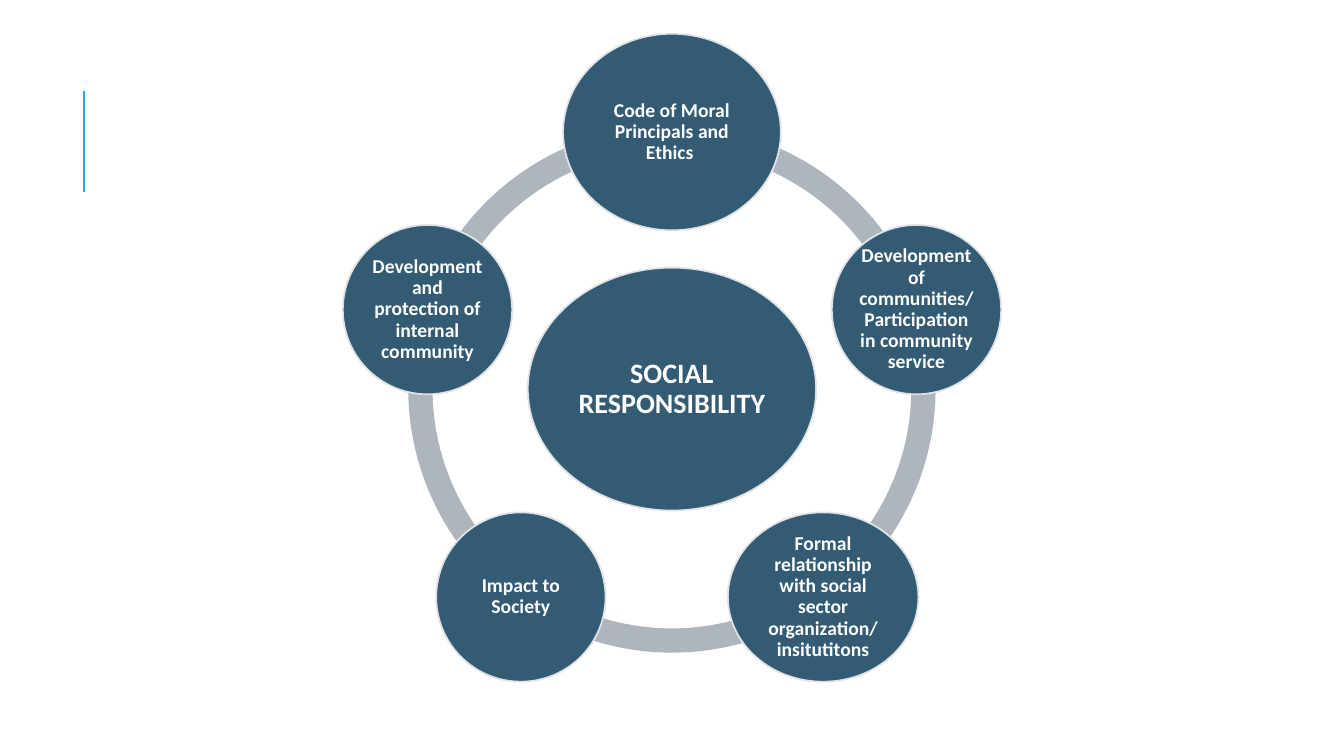
from dataclasses import dataclass
from math import cos, radians, sin

from pptx import Presentation
from pptx.dml.color import RGBColor
from pptx.enum.shapes import MSO_CONNECTOR as Connector, MSO_SHAPE as Shape
from pptx.enum.text import MSO_ANCHOR as Anchor, PP_ALIGN as Align
from pptx.oxml.ns import qn
from pptx.util import Inches, Pt

HUB = ("SOCIAL RESPONSIBILITY", 2.86, 2.41)
NODES = [
    ("Code of Moral Principals and Ethics ", 2.16, 1.95),
    ("Development of communities/ Participation in community service", 1.68, 1.68),
    ("Formal relationship with social sector organization/ insitutitons", 1.89, 1.68),
    ("Impact to Society", 1.68, 1.68),
    ("Development and protection of internal community", 1.68, 1.68),
]


@dataclass(frozen=True)
class Theme:
    font: str = "Calibri"
    hub_size: int = 20
    node_size: int = 14
    circle: RGBColor = RGBColor(0x33, 0x5B, 0x74)
    outline: RGBColor = RGBColor(0xDF, 0xE3, 0xE5)
    ring: RGBColor = RGBColor(0xAE, 0xB5, 0xBC)
    accent: RGBColor = RGBColor(0x1C, 0xAD, 0xE4)
    text: RGBColor = RGBColor(0xFF, 0xFF, 0xFF)


THEME = Theme()
WIDTH, HEIGHT = 13.33, 7.5
CENTER_X, CENTER_Y = WIDTH / 2, 3.86
RING_SIZE, RING_THICKNESS = 5.23, 0.046
ORBIT = 2.55
STEP = 360 / len(NODES)
ANGLE_SCALE = 0.6


def add_centered(slide, kind, x, y, width, height, fill):
    shape = slide.shapes.add_shape(
        kind, Inches(x - width / 2), Inches(y - height / 2), Inches(width), Inches(height))
    shape.shadow.inherit = False
    shape.fill.solid()
    shape.fill.fore_color.rgb = fill
    shape.line.fill.background()
    return shape


def add_arc(slide, start):
    arc = add_centered(slide, Shape.BLOCK_ARC, CENTER_X, CENTER_Y,
                       RING_SIZE, RING_SIZE, THEME.ring)
    arc.adjustments[0] = start % 360 * ANGLE_SCALE
    arc.adjustments[1] = (start + STEP) % 360 * ANGLE_SCALE
    arc.adjustments[2] = RING_THICKNESS


def add_circle(slide, content, x, y, size):
    text, width, height = content
    circle = add_centered(slide, Shape.OVAL, x, y, width, height, THEME.circle)
    circle.line.color.rgb = THEME.outline
    circle.line.width = Pt(1.25)
    frame = circle.text_frame
    frame.word_wrap = True
    frame.vertical_anchor = Anchor.MIDDLE
    frame.margin_left = frame.margin_right = Inches(0.02)
    frame.margin_top = frame.margin_bottom = Inches(0.02)
    paragraph = frame.paragraphs[0]
    paragraph.text = text
    paragraph.alignment = Align.CENTER
    paragraph.line_spacing = 0.9
    font = paragraph.font
    font.name, font.size, font.bold = THEME.font, Pt(size), True
    font.color.rgb = THEME.text


def add_accent_line(slide):
    x = Inches(WIDTH / 16)
    line = slide.shapes.add_connector(
        Connector.STRAIGHT, x, Inches(HEIGHT * 0.12), x, Inches(1.9))
    line.line.color.rgb = THEME.accent
    line.line.width = Pt(1.5)
    properties = line.element.spPr
    properties.append(properties.makeelement(qn("a:effectLst"), {}))


def main():
    presentation = Presentation()
    presentation.slide_width, presentation.slide_height = Inches(WIDTH), Inches(HEIGHT)
    slide = presentation.slides.add_slide(presentation.slide_layouts[6])
    add_accent_line(slide)
    angles = [index * STEP - 90 for index in range(len(NODES))]
    for angle in angles:
        add_arc(slide, angle)
    add_circle(slide, HUB, CENTER_X, CENTER_Y, THEME.hub_size)
    for node, angle in zip(NODES, angles):
        x = CENTER_X + ORBIT * cos(radians(angle))
        y = CENTER_Y + ORBIT * sin(radians(angle))
        add_circle(slide, node, x, y, THEME.node_size)
    presentation.save("out.pptx")


if __name__ == "__main__":
    main()
